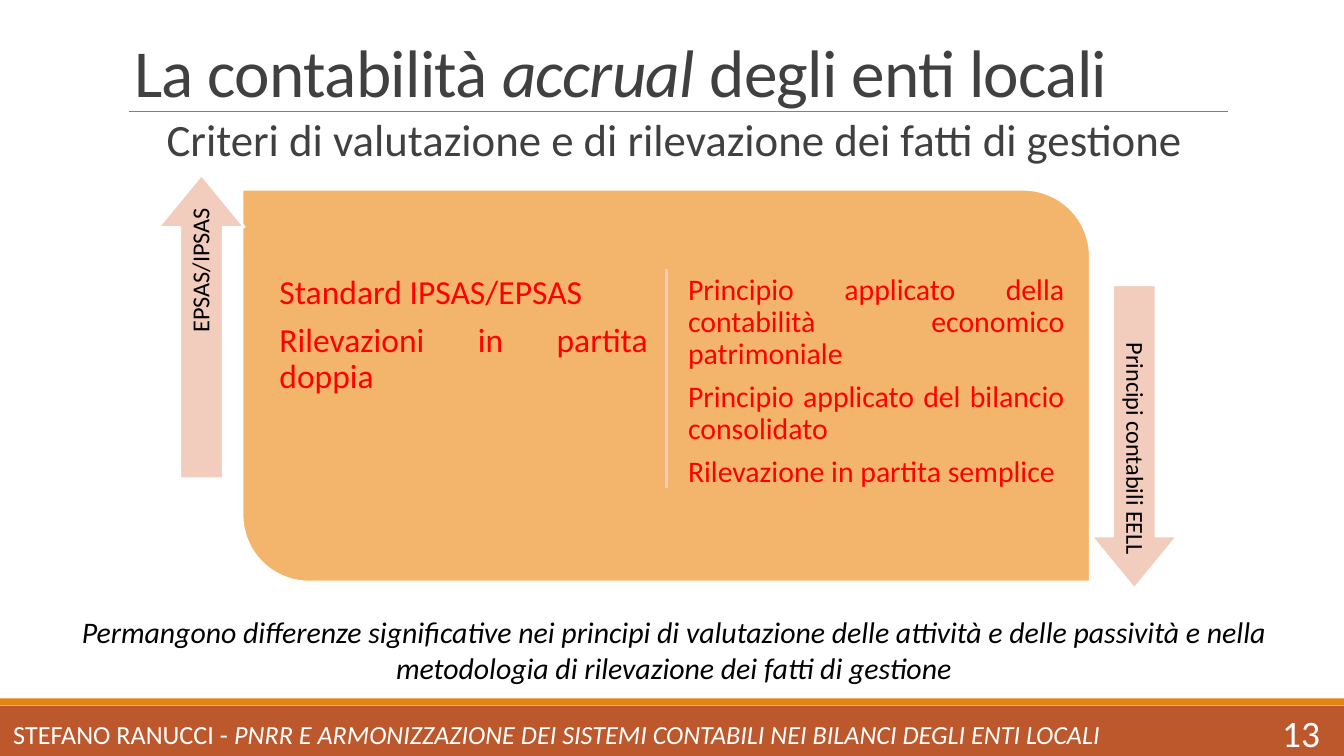
from dataclasses import dataclass

import pptx
import pptx.dml.color
import pptx.enum.shapes
import pptx.enum.text
import pptx.oxml
import pptx.util

Pt = pptx.util.Pt
RGBColor = pptx.dml.color.RGBColor
Align = pptx.enum.text.PP_ALIGN
Anchor = pptx.enum.text.MSO_ANCHOR
Preset = pptx.enum.shapes.MSO_SHAPE

RUST = RGBColor(0xBD, 0x58, 0x2C)
ORANGE = RGBColor(0xE4, 0x83, 0x12)
SAND = RGBColor(0xF3, 0xB5, 0x6C)
PEACH = RGBColor(0xF2, 0xCD, 0xBD)
GREY = RGBColor(0x80, 0x80, 0x80)
DARK = RGBColor(0x40, 0x40, 0x40)
RED = RGBColor(0xFF, 0x00, 0x00)
BLACK = RGBColor(0x00, 0x00, 0x00)
WHITE = RGBColor(0xFF, 0xFF, 0xFF)


@dataclass(frozen=True)
class Box:
    left: float
    top: float
    width: float
    height: float

    def lengths(self) -> list:
        return [Pt(v) for v in (self.left, self.top, self.width, self.height)]


@dataclass(frozen=True)
class Run:
    text: str
    italic: bool = False


@dataclass(frozen=True)
class Standard:
    """A set of rules, shown as an arrow with its label alongside."""
    label: str
    arrow: Box
    label_box: Box
    rotation: int


@dataclass(frozen=True)
class Criteria:
    """One column of the panel, written in a body placeholder."""
    placeholder: int
    box: Box
    size: float
    anchor: Anchor
    lines: list


STANDARDS = [
    Standard("EPSAS/IPSAS", Box(26.6, 151.9, 162.7, 46.1),
             Box(33.8, 170.6, 148.3, 23), 270),
    Standard("Principi contabili EELL", Box(526.3, 211, 162.7, 46.1),
             Box(533.5, 215.3, 148.3, 23), 90),
]

CRITERIA = [
    Criteria(1, Box(144.7, 142.6, 207.4, 80), 18, Anchor.TOP,
             [[Run("Standard IPSAS/EPSAS")],
              [Run("Rilevazioni in partita doppia")]]),
    Criteria(2, Box(363.6, 126, 211.7, 157), 16, Anchor.MIDDLE,
             [[Run("Principio applicato della contabilità economico patrimoniale")],
              [Run("Principio applicato del bilancio consolidato")],
              [Run("Rilevazione in partita semplice")]]),
]


def write(shape, paragraphs: list, *, size: float, color: RGBColor,
          align=Align.LEFT, anchor=Anchor.TOP, line_spacing: float = 1,
          after: float = 0, insets=(7.2, 3.6), tracking: int = 0) -> None:
    """Fill a shape with paragraphs of runs; insets are horizontal, vertical."""
    frame = shape.text_frame
    frame.word_wrap = True
    frame.auto_size = pptx.enum.text.MSO_AUTO_SIZE.NONE
    frame.vertical_anchor = anchor
    frame.margin_left = frame.margin_right = Pt(insets[0])
    frame.margin_top = frame.margin_bottom = Pt(insets[1])
    for index, runs in enumerate(paragraphs):
        paragraph = frame.add_paragraph() if index else frame.paragraphs[0]
        paragraph.alignment = align
        paragraph.line_spacing = line_spacing
        paragraph.space_before = Pt(0)
        paragraph.space_after = Pt(after)
        properties = paragraph._p.get_or_add_pPr()
        properties.set("marL", "0")
        properties.set("indent", "0")
        properties.append(pptx.oxml.parse_xml(
            '<a:buNone xmlns:a="http://schemas.openxmlformats.org/drawingml/2006/main"/>'))
        for part in runs:
            run = paragraph.add_run()
            run.text = part.text
            run.font.name = "Calibri"
            run.font.size = Pt(size)
            run.font.color.rgb = color
            run.font.italic = part.italic
            if tracking:
                run._r.get_or_add_rPr().set("spc", str(tracking))


def place(shape, box: Box) -> None:
    shape.left, shape.top, shape.width, shape.height = box.lengths()


def add_label(slide, box: Box, runs: list, *, rotation: int = 0, **text_format) -> None:
    label = slide.shapes.add_textbox(*box.lengths())
    label.rotation = rotation
    write(label, [runs], **text_format)


def add_filled(slide, preset, box: Box, fill: RGBColor, *, outlined: bool = False,
               adjustments=(), rotation: int = 0) -> None:
    shape = slide.shapes.add_shape(preset, *box.lengths())
    shape.shadow.inherit = False
    shape.rotation = rotation
    for index, value in enumerate(adjustments):
        shape.adjustments[index] = value
    shape.fill.solid()
    shape.fill.fore_color.rgb = fill
    if outlined:
        shape.line.color.rgb = WHITE
        shape.line.width = Pt(1.25)
    else:
        shape.line.fill.background()


def add_rule(slide, start: tuple, end: tuple, color: RGBColor, width: float) -> None:
    rule = slide.shapes.add_connector(
        pptx.enum.shapes.MSO_CONNECTOR.STRAIGHT, *[Pt(v) for v in start + end])
    rule.line.color.rgb = color
    rule.line.width = Pt(width)
    rule.element.spPr.append(pptx.oxml.parse_xml(
        '<a:effectLst xmlns:a="http://schemas.openxmlformats.org/drawingml/2006/main"/>'))


def add_criteria(slide, criteria: Criteria) -> None:
    body = slide.placeholders[criteria.placeholder]
    place(body, criteria.box)
    write(body, criteria.lines, size=criteria.size, color=RED, align=Align.JUSTIFY,
          anchor=criteria.anchor, line_spacing=0.9, after=0.35 * criteria.size,
          insets=(5, 5))
    # Bring the column in front of the panel
    body.element.getparent().append(body.element)


def add_standard(slide, standard: Standard) -> None:
    add_filled(slide, Preset.RIGHT_ARROW, standard.arrow, PEACH, outlined=True,
               adjustments=(0.5, 0.61), rotation=standard.rotation)
    add_label(slide, standard.label_box, [Run(standard.label)],
              rotation=standard.rotation, size=13, color=BLACK, align=Align.RIGHT,
              anchor=Anchor.MIDDLE, line_spacing=0.9, insets=(3.6, 3.6))


def main() -> None:
    deck = pptx.Presentation()
    deck.slide_width, deck.slide_height = Pt(720), Pt(405)
    slide = deck.slides.add_slide(deck.slide_layouts.get_by_name("Two Content"))

    add_filled(slide, Preset.RECTANGLE, Box(0, 378, 720, 27), RUST)
    add_filled(slide, Preset.RECTANGLE, Box(0, 374.2, 720, 3.8), ORANGE)
    add_rule(slide, (69.1, 59.6), (658.1, 59.6), GREY, 0.5)

    title = slide.shapes.title
    place(title, Box(64.8, 17.3, 594, 46.1))
    write(title, [[Run("La contabilità "), Run("accrual", True),
                   Run(" degli enti locali")]],
          size=36, color=DARK, anchor=Anchor.BOTTOM, line_spacing=0.85, tracking=-40)
    add_label(slide, Box(64.1, 59.8, 594, 33.1),
              [Run("Criteri di valutazione e di rilevazione dei fatti di gestione")],
              size=24, color=DARK, align=Align.CENTER, line_spacing=0.9, insets=(0, 3.6))

    add_filled(slide, Preset.ROUND_2_DIAG_RECTANGLE, Box(129.8, 101.5, 454.2, 210.2),
               SAND, outlined=True, adjustments=(0, 0.17))
    add_rule(slide, (357.1, 144), (357.1, 261.4), PEACH, 1.25)
    for criteria in CRITERIA:
        add_criteria(slide, criteria)
    for standard in STANDARDS:
        add_standard(slide, standard)

    add_label(slide, Box(5, 325.4, 712.1, 46.1),
              [Run("Permangono differenze significative nei principi di valutazione "
                   "delle attività e delle passività e nella metodologia di "
                   "rilevazione dei fatti di gestione", True)],
              size=16, color=BLACK, align=Align.CENTER)
    add_label(slide, Box(0, 381.6, 658.8, 23.8),
              [Run("STEFANO RANUCCI - "),
               Run("PNRR E ARMONIZZAZIONE DEI SISTEMI CONTABILI NEI BILANCI "
                   "DEGLI ENTI LOCALI", True)],
              size=14, color=WHITE, anchor=Anchor.MIDDLE)
    add_label(slide, Box(636.5, 381.6, 77.8, 21.6), [Run("13")],
              size=20, color=WHITE, align=Align.RIGHT, anchor=Anchor.MIDDLE)

    deck.save("out.pptx")


if __name__ == "__main__":
    main()
